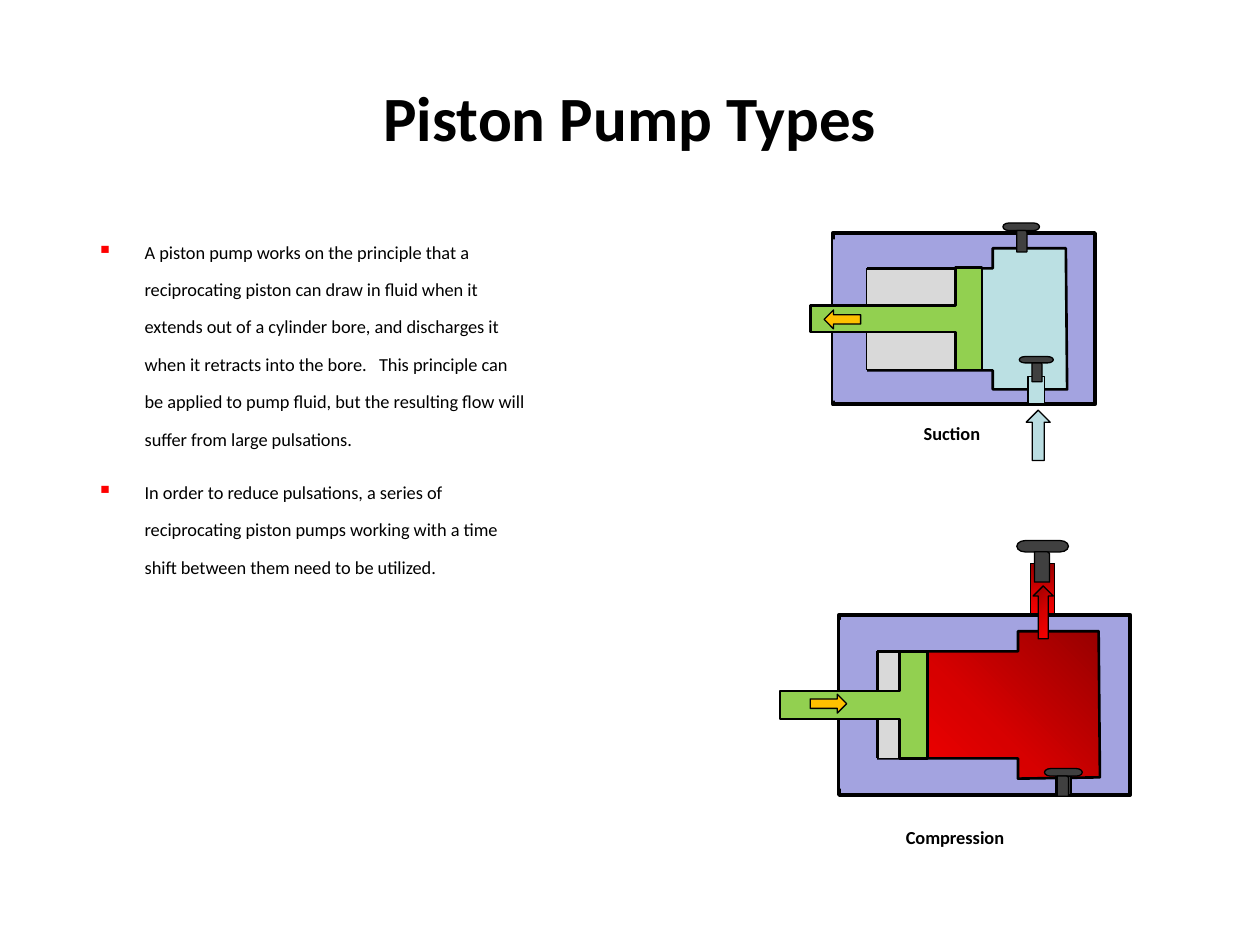
import dataclasses
import typing

import lxml.etree
import pptx
import pptx.dml.color
import pptx.enum.shapes
import pptx.enum.text
import pptx.oxml
import pptx.oxml.ns
import pptx.util

Inches = pptx.util.Inches
Pt = pptx.util.Pt
RGB = pptx.dml.color.RGBColor
Kind = pptx.enum.shapes.MSO_SHAPE
Align = pptx.enum.text.PP_ALIGN
qn = pptx.oxml.ns.qn
Box = tuple[float, float, float, float]

BLACK = RGB(0, 0, 0)
CASE = RGB(0xA3, 0xA3, 0xE0)
FLUID = RGB(0xBB, 0xE0, 0xE3)
FLOW = RGB(0xBA, 0xDD, 0xE1)
GREY = RGB(0xD9, 0xD9, 0xD9)
GREEN = RGB(0x92, 0xD0, 0x50)
STEEL = RGB(0x40, 0x40, 0x40)
GOLD = RGB(0xFF, 0xC0, 0x00)
RED = RGB(0xFF, 0, 0)
HEAT = ((0, RGB(0x97, 0, 0)), (50, RGB(0xD7, 0, 0)), (100, RED))

RECT, RIGHT, LEFT = Kind.RECTANGLE, Kind.RIGHT_ARROW, Kind.LEFT_ARROW
BODY_SIZE = Pt(10.5)


@dataclasses.dataclass
class Heat:
    angle: int


Fill = RGB | Heat


@dataclasses.dataclass
class Part:
    kind: Kind
    box: Box
    fill: Fill
    line: float = 0.75
    turn: int = 0
    adj: tuple[float, ...] = ()


@dataclasses.dataclass
class Pump:
    label: str
    place: Box
    case: Box
    room: list[tuple[float, float]]
    fluid: Fill
    cover: Box
    back: list[Part]
    front: list[Part]


def paint(shape: typing.Any, fill: Fill, line: float) -> None:
    shape.shadow.inherit = False
    if isinstance(fill, Heat):
        shape.fill.gradient()
        grad = shape._element.spPr.find(qn("a:gradFill"))
        stops = grad.find(qn("a:gsLst"))
        for old in list(stops):
            stops.remove(old)
        for pos, color in HEAT:
            stop = lxml.etree.SubElement(stops, qn("a:gs"), pos=str(pos * 1000))
            lxml.etree.SubElement(stop, qn("a:srgbClr"), val=str(color))
        grad.find(qn("a:lin")).set("ang", str(fill.angle * 60000))
    else:
        shape.fill.solid()
        shape.fill.fore_color.rgb = fill
    if line:
        shape.line.color.rgb = BLACK
        shape.line.width = Pt(line)
    else:
        shape.line.fill.background()


def draw(group: typing.Any, part: Part) -> None:
    shape = group.shapes.add_shape(part.kind, *map(Inches, part.box))
    shape.rotation = part.turn
    for i, value in enumerate(part.adj):
        shape.adjustments[i] = value
    paint(shape, part.fill, part.line)


def rule(group: typing.Any, x: float, top: float, end: float, width: float) -> None:
    line = group.shapes.add_connector(
        pptx.enum.shapes.MSO_CONNECTOR.STRAIGHT, *map(Inches, (x, top, x, end)))
    line.line.color.rgb = BLACK
    line.line.width = Pt(width)
    lxml.etree.SubElement(line._element.spPr, qn("a:effectLst"))


def valve(cap: Box, stem: Box) -> list[Part]:
    return [Part(Kind.FLOWCHART_TERMINATOR, cap, STEEL),
            Part(Kind.ROUND_1_RECTANGLE, stem, STEEL)]


def piston(box: Box) -> Part:
    return Part(Kind.LEFT_RIGHT_UP_ARROW, box, GREEN, 1.5, 270, (0.263, 0.131, 0))


def build(slide: typing.Any, pump: Pump) -> None:
    group = slide.shapes.add_group_shape()
    for part in pump.back:
        draw(group, part)

    # Casing, fluid room and the cover at its closed end
    draw(group, Part(RECT, pump.case, CASE, 2.25))
    pen = group.shapes.build_freeform(
        *(Inches(v) for v in pump.room[0]), scale=1.0)
    pen.add_line_segments([(Inches(x), Inches(y)) for x, y in pump.room[1:]])
    paint(pen.convert_to_shape(), pump.fluid, 1.5)
    draw(group, Part(RECT, pump.cover, CASE, 0))
    x, top, _, high = pump.case
    rule(group, x, top, top + high, 0.75)
    ys = [y for _, y in pump.room]
    rule(group, x + pump.cover[2], ys[0], ys[5], 1.5)

    for part in pump.front:
        draw(group, part)

    # Caption
    frame = group.shapes.add_textbox(*map(Inches, pump.place)).text_frame
    frame.margin_left = frame.margin_right = 0
    frame.margin_top = frame.margin_bottom = 0
    frame.word_wrap = False
    frame.vertical_anchor = pptx.enum.text.MSO_ANCHOR.MIDDLE
    para = frame.paragraphs[0]
    para.text = pump.label
    para.alignment = Align.CENTER
    style(para, BODY_SIZE, True)


def style(para: typing.Any, size: int, bold: bool) -> None:
    para.font.name = "Calibri"
    para.font.size = size
    para.font.bold = bold
    para.font.color.rgb = BLACK


def bullet(para: typing.Any) -> None:
    props = para._p.get_or_add_pPr()
    props.set("marL", str(Inches(0.38)))
    props.set("indent", str(-Inches(0.38)))
    marks = [pptx.oxml.parse_xml(f'<a:{body} xmlns:a="{pptx.oxml.ns.nsdecls("a").split(chr(34))[1]}"/>')
             for body in ("buClr", "buSzPct", "buChar")]
    lxml.etree.SubElement(marks[0], qn("a:srgbClr"), val=str(RED))
    marks[1].set("val", "120000")
    marks[2].set("char", "▪")
    spot = props.find(qn("a:defRPr"))
    for mark in marks:
        spot.addprevious(mark)


TEXTS = (
    "A piston pump works on the principle that a reciprocating piston can draw in fluid when it "
    "extends out of a cylinder bore, and discharges it when it retracts into the bore.   This "
    "principle can be applied to pump fluid, but the resulting flow will suffer from large pulsations.",
    "In order to reduce pulsations, a series of reciprocating piston pumps working with a time "
    "shift between them need to be utilized.",
)

PUMPS = (
    Pump("Suction", (7.23, 3.32, 0.65, 0.23), (6.61, 1.85, 2.08, 1.36),
         [(7.88, 2.13), (7.88, 1.97), (8.46, 1.97), (8.47, 3.09),
          (7.88, 3.09), (7.88, 2.94), (6.61, 2.94), (6.61, 2.13)],
         FLUID, (6.61, 1.9, 0.27, 1.28), [],
         [Part(RIGHT, (8.04, 3.36, 0.4, 0.19), FLOW, turn=270),
          Part(RECT, (6.88, 2.14, 0.7, 0.79), GREY),
          piston((6.71, 1.85, 0.81, 1.36)),
          *valve((7.96, 1.77, 0.29, 0.06), (8.07, 1.83, 0.08, 0.17)),
          Part(RECT, (8.16, 2.99, 0.13, 0.21), FLUID),
          *valve((8.09, 2.83, 0.27, 0.05), (8.19, 2.88, 0.08, 0.15)),
          Part(LEFT, (6.54, 2.46, 0.29, 0.15), GOLD)]),
    Pump("Compression", (7.11, 6.48, 0.94, 0.33), (6.66, 4.88, 2.31, 1.43),
         [(8.08, 5.17), (8.08, 5.01), (8.72, 5.01), (8.73, 6.17),
          (8.08, 6.18), (8.08, 6.02), (6.66, 6.02), (6.66, 5.17)],
         Heat(135), (6.66, 4.92, 0.3, 1.34),
         [Part(RECT, (8.18, 4.47, 0.19, 0.46), Heat(90)),
          *valve((8.07, 4.29, 0.41, 0.09), (8.21, 4.38, 0.12, 0.24))],
         [Part(RECT, (8.38, 6.16, 0.12, 0.15), STEEL),
          *valve((8.29, 6.1, 0.3, 0.06), (8.39, 6.16, 0.09, 0.16)),
          Part(RIGHT, (8.07, 4.78, 0.42, 0.16), Heat(135), turn=270),
          Part(RECT, (6.97, 5.18, 0.2, 0.84), GREY),
          piston((6.35, 5.01, 0.85, 1.17)),
          Part(RIGHT, (6.43, 5.51, 0.29, 0.15), GOLD)]),
)


def main() -> None:
    deck = pptx.Presentation()
    deck.slide_width, deck.slide_height = Inches(10), Inches(7.5)
    slide = deck.slides.add_slide(deck.slide_layouts[5])

    # Title
    title = slide.shapes.title
    title.left, title.top, title.width, title.height = map(Inches, (0.5, 0.3, 9, 1.25))
    title.text_frame.text = "Piston Pump Types"
    title.text_frame.vertical_anchor = pptx.enum.text.MSO_ANCHOR.MIDDLE
    head = title.text_frame.paragraphs[0]
    head.alignment = Align.CENTER
    style(head, Pt(36), True)

    # Bulleted text
    frame = slide.shapes.add_textbox(*map(Inches, (0.67, 1.74, 3.6, 4.8))).text_frame
    frame.word_wrap = True
    for i, text in enumerate(TEXTS):
        para = frame.add_paragraph() if i else frame.paragraphs[0]
        para.text = text
        para.line_spacing = 1.7
        para.space_before = Pt(9)
        style(para, BODY_SIZE, False)
        bullet(para)

    # Pump drawings
    for pump in PUMPS:
        build(slide, pump)

    deck.save("out.pptx")


if __name__ == "__main__":
    main()
